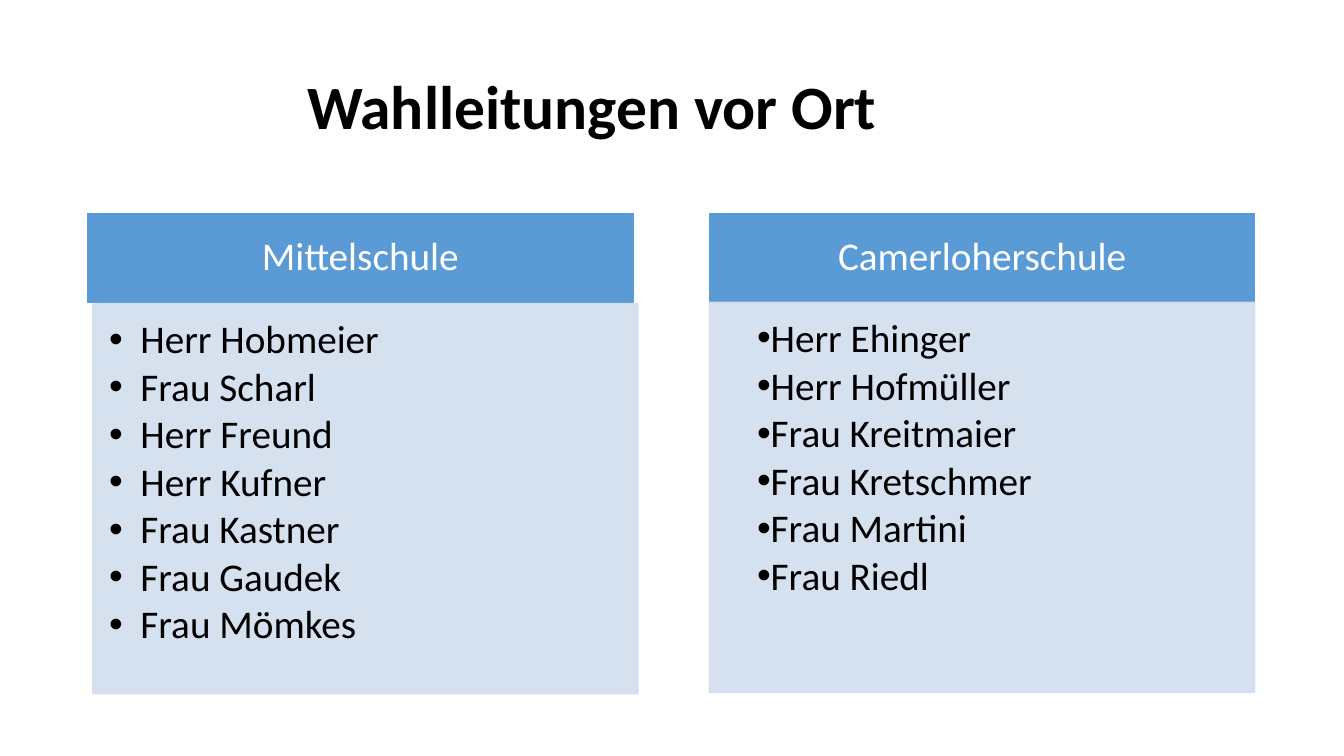
from lxml import etree
from pptx import Presentation
from pptx.dml.color import RGBColor
from pptx.enum.shapes import MSO_SHAPE
from pptx.enum.text import MSO_ANCHOR, PP_ALIGN
from pptx.oxml.ns import qn
from pptx.util import Cm, Pt

RECTANGLE = MSO_SHAPE.RECTANGLE
TOP, MIDDLE = MSO_ANCHOR.TOP, MSO_ANCHOR.MIDDLE
LEFT, CENTER = PP_ALIGN.LEFT, PP_ALIGN.CENTER
TITLE_ONLY = 5

BLUE, PALE_BLUE, BLACK, WHITE = "5B9BD5", "D2DEEF", "000000", "FFFFFF"
COLUMN_WIDTH, HEADER_HEIGHT, LIST_HEIGHT = 13.74, 2.24, 9.83
COLUMN_TOP = 5.38
INDENT = 0.79

SCHOOLS = [
    {
        "name": "Mittelschule",
        "left": 2.21,
        "list_shift": (0.13, 0.03),
        "hanging": -INDENT,
        "people": ["Herr Hobmeier", "Frau Scharl", "Herr Freund", "Herr Kufner",
                   "Frau Kastner", "Frau Gaudek", "Frau Mömkes"],
    },
    {
        "name": "Camerloherschule",
        "left": 17.88,
        "list_shift": (0, 0),
        "hanging": 0,
        "people": ["Herr Ehinger", "Herr Hofmüller", "Frau Kreitmaier",
                   "Frau Kretschmer", "Frau Martini", "Frau Riedl"],
    },
]


def color(value):
    """Return the colour for a hex string."""
    return RGBColor.from_string(value)


def apply_format(target, values):
    """Set every attribute named in a dict of format values."""
    for name, value in values.items():
        setattr(target, name, value)


def write_paragraph(para, text, size, hex_color, bold=False, **layout):
    """Fill a paragraph with one formatted run."""
    apply_format(para, {"line_spacing": 0.9, **layout})
    span = para.add_run()
    span.text = text
    apply_format(span.font, {"name": "Calibri", "size": Pt(size), "bold": bold})
    span.font.color.rgb = color(hex_color)


def add_bullet(para, hanging):
    """Give a paragraph a round bullet and its indents."""
    properties = para._p.get_or_add_pPr()
    properties.set("marL", str(Cm(INDENT)))
    properties.set("indent", str(Cm(hanging)))
    etree.SubElement(properties, qn("a:buFont"), typeface="Arial")
    etree.SubElement(properties, qn("a:buChar"), char="•")


def add_panel(slide, box, hex_color, anchor, margins, opacity=100):
    """Add a filled rectangle in the box and return its text frame."""
    panel = slide.shapes.add_shape(RECTANGLE, *map(Cm, box))
    panel.shadow.inherit = False
    panel.line.width = Pt(1)
    for fill in (panel.fill, panel.line.fill):
        fill.solid()
        fill.fore_color.rgb = color(hex_color)
    if opacity < 100:
        for swatch in panel._element.spPr.iter(qn("a:srgbClr")):
            etree.SubElement(swatch, qn("a:alpha"), val=str(opacity * 1000))
    frame = panel.text_frame
    sides = ("margin_left", "margin_top", "margin_right", "margin_bottom")
    apply_format(frame, {"word_wrap": True, "vertical_anchor": anchor,
                         **dict(zip(sides, map(Cm, margins)))})
    return frame


def add_title(slide, box, text):
    """Place the slide title in the box."""
    title = slide.shapes.title
    apply_format(title, dict(zip(("left", "top", "width", "height"), map(Cm, box))))
    title.text_frame.vertical_anchor = MIDDLE
    write_paragraph(title.text_frame.paragraphs[0], text, 44, BLACK, bold=True,
                    alignment=CENTER)


def add_school(slide, box, school):
    """Place a school's header and its list of people in the box."""
    left, top, width, height = box
    header = add_panel(slide, (left, top, width, HEADER_HEIGHT), BLUE, MIDDLE,
                       (0.56, 0.3, 0.56, 0.3))
    write_paragraph(header.paragraphs[0], school["name"], 28, WHITE, alignment=CENTER)

    shift_x, shift_y = school["list_shift"]
    list_box = (left + shift_x, top + HEADER_HEIGHT + shift_y, width,
                height - HEADER_HEIGHT)
    people = add_panel(slide, list_box, PALE_BLUE, TOP, (0.41, 0.41, 0.56, 0.61), 90)
    for index, person in enumerate(school["people"]):
        para = people.add_paragraph() if index else people.paragraphs[0]
        add_bullet(para, school["hanging"])
        write_paragraph(para, person, 28, BLACK, alignment=LEFT, level=1,
                        space_after=Pt(3.7))


def main():
    """Build and save the deck."""
    deck = Presentation()
    apply_format(deck, {"slide_width": Cm(33.87), "slide_height": Cm(19.05)})
    page = deck.slides.add_slide(deck.slide_layouts[TITLE_ONLY])
    add_title(page, (2.34, 1.3, 25.17, 2.9), "Wahlleitungen vor Ort")
    for school in SCHOOLS:
        box = (school["left"], COLUMN_TOP, COLUMN_WIDTH, HEADER_HEIGHT + LIST_HEIGHT)
        add_school(page, box, school)
    deck.save("out.pptx")


if __name__ == "__main__":
    main()
